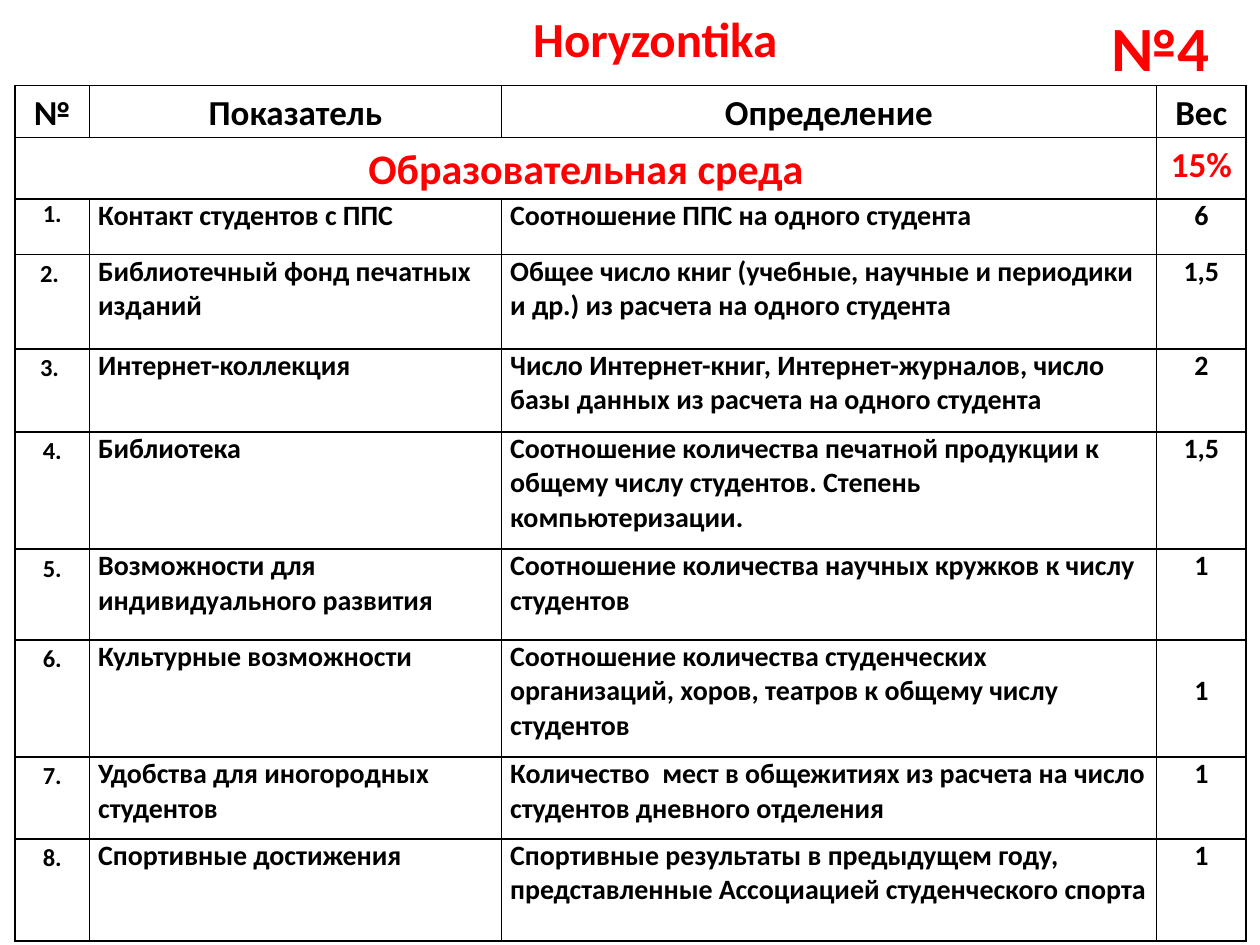
from lxml import etree
from pptx import Presentation
from pptx.dml.color import RGBColor
from pptx.enum.text import MSO_ANCHOR, PP_ALIGN
from pptx.oxml.ns import qn
from pptx.util import Inches, Pt

CENTER, LEFT = PP_ALIGN.CENTER, PP_ALIGN.LEFT
MIDDLE = MSO_ANCHOR.MIDDLE
TITLE_ONLY = 5
COLORS = {"text": "000000", "accent": "FF0000", "border": "000000"}

COLUMN_WIDTHS = [0.59, 3.27, 5.2, 0.71]
ROW_HEIGHTS = [0.41, 0.49, 0.44, 0.75, 0.66, 0.93, 0.72, 0.93, 0.65, 0.81]
HEADINGS = ["№", "Показатель", "Определение", "Вес"]
SECTION, SECTION_WEIGHT = "Образовательная среда", "15%"
INDICATORS = [
    ("1.", "Контакт студентов с ППС", "Соотношение ППС на одного студента", "6"),
    ("2. ", "Библиотечный фонд печатных изданий",
     "Общее число книг (учебные, научные и периодики и др.) из расчета на одного студента", "1,5"),
    ("3. ", "Интернет-коллекция",
     "Число Интернет-книг, Интернет-журналов, число базы данных из расчета на одного студента", "2"),
    ("4.", "Библиотека",
     "Соотношение количества печатной продукции к общему числу студентов. "
     "Степень компьютеризации.", "1,5"),
    ("5.", "Возможности для индивидуального развития",
     "Соотношение количества научных кружков к числу студентов", "1"),
    ("6.", "Культурные возможности",
     "Соотношение количества студенческих организаций, хоров, театров к общему числу студентов", "1"),
    ("7.", "Удобства для иногородных студентов",
     "Количество  мест в общежитиях из расчета на число студентов дневного отделения", "1"),
    ("8.", "Спортивные достижения",
     "Спортивные результаты в предыдущем году, представленные Ассоциацией студенческого спорта", "1"),
]
LOWERED_WEIGHT_ROW = 7


class SlideBuilder:
    """Holds the shared text style and the slide being filled."""

    font_name = "Calibri"

    def __init__(self, slide):
        self.slide = slide

    def set_text(self, holder, text, size, color="text", align=CENTER, spacing=None):
        """Fill a box or a table cell with one formatted paragraph."""
        frame = holder.text_frame
        frame.text = text
        para = frame.paragraphs[0]
        para.alignment = align
        if spacing:
            para.line_spacing = spacing
        font = para.runs[0].font
        font.name, font.size, font.bold = self.font_name, Pt(size), True
        font.color.rgb = RGBColor.from_string(COLORS[color])

    def place(self, box, left, top, width, height):
        box.left, box.top = Inches(left), Inches(top)
        box.width, box.height = Inches(width), Inches(height)
        box.text_frame.word_wrap = True
        box.text_frame.vertical_anchor = MIDDLE

    def title(self, text, size, *bounds):
        box = self.slide.shapes.title
        self.place(box, *bounds)
        self.set_text(box, text, size, "accent")

    def label(self, text, size, *bounds):
        box = self.slide.shapes.add_textbox(0, 0, 0, 0)
        self.place(box, *bounds)
        self.set_text(box, text, size, "accent")

    def table(self, left, top, widths, heights):
        frame = self.slide.shapes.add_table(
            len(heights), len(widths), Inches(left), Inches(top),
            Inches(sum(widths)), Inches(sum(heights)))
        table = frame.table
        table.first_row = table.horz_banding = False
        for column, width in zip(table.columns, widths):
            column.width = Inches(width)
        for row, height in zip(table.rows, heights):
            row.height = Inches(height)
        for cell in table.iter_cells():
            cell.margin_left = cell.margin_right = Inches(0.07)
            cell.margin_top = cell.margin_bottom = 0
            cell.fill.background()
            self.border(cell)
        return table

    def border(self, cell):
        properties = cell._tc.get_or_add_tcPr()
        for index, side in enumerate(("a:lnL", "a:lnR", "a:lnT", "a:lnB")):
            line = etree.Element(qn(side), w=str(Pt(1)))
            fill = etree.SubElement(line, qn("a:solidFill"))
            etree.SubElement(fill, qn("a:srgbClr"), val=COLORS["border"])
            properties.insert(index, line)


def main():
    deck = Presentation()
    deck.slide_width, deck.slide_height = Inches(10), Inches(7.5)
    page = SlideBuilder(deck.slides.add_slide(deck.slide_layouts[TITLE_ONLY]))

    table = page.table(0.12, 0.68, COLUMN_WIDTHS, ROW_HEIGHTS)
    for column, heading in enumerate(HEADINGS):
        page.set_text(table.cell(0, column), heading, 20, spacing=1.15)

    table.cell(1, 0).merge(table.cell(1, 2))
    page.set_text(table.cell(1, 0), SECTION, 24, color="accent", spacing=1.15)
    page.set_text(table.cell(1, 3), SECTION_WEIGHT, 20, color="accent", spacing=1.15)

    for row, (number, indicator, definition, weight) in enumerate(INDICATORS, start=2):
        page.set_text(table.cell(row, 0), number, 14, spacing=1.15 if row > 2 else None)
        page.set_text(table.cell(row, 1), indicator, 16, align=LEFT)
        page.set_text(table.cell(row, 2), definition, 16, align=LEFT)
        page.set_text(table.cell(row, 3), weight, 16)
    table.cell(LOWERED_WEIGHT_ROW, 3).margin_top = Inches(0.27)

    page.title("Horyzontika", 28, 2.8, 0, 4.8, 0.6)
    page.label("№4", 36, 8.62, -0.03, 1.18, 0.79)
    deck.save("out.pptx")


if __name__ == "__main__":
    main()
